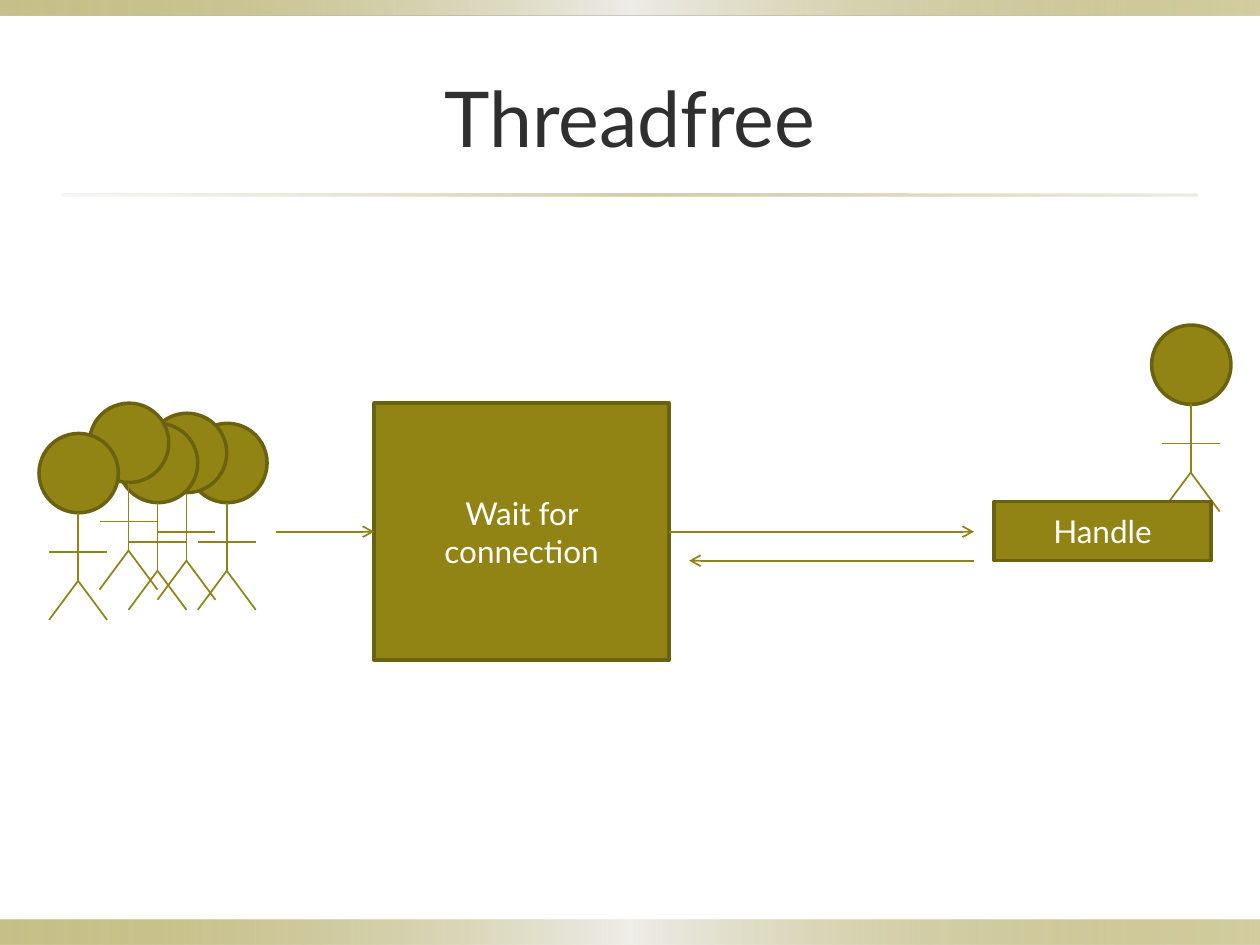
from dataclasses import dataclass

from lxml import etree
from pptx import Presentation
from pptx.dml.color import RGBColor
from pptx.enum.shapes import MSO_CONNECTOR, MSO_SHAPE
from pptx.enum.text import MSO_ANCHOR, PP_ALIGN
from pptx.oxml.ns import qn
from pptx.util import Inches, Pt

RECTANGLE, OVAL = MSO_SHAPE.RECTANGLE, MSO_SHAPE.OVAL
STRAIGHT = MSO_CONNECTOR.STRAIGHT
MIDDLE, CENTER = MSO_ANCHOR.MIDDLE, PP_ALIGN.CENTER
LEFT_SIDE, RIGHT_SIDE = 1, 3


@dataclass(frozen=True)
class Theme:
    font: str = "Lato"
    title_size: int = 44
    body_size: int = 18
    olive: str = "918415"
    outline: str = "6B6210"
    pale: str = "EEEDE8"
    sand: str = "DCD9CC"
    title: str = "2F2F2F"
    white: str = "FFFFFF"


theme = Theme()

presentation = Presentation()
presentation.slide_width = Inches(10)
presentation.slide_height = Inches(7.5)
slide = presentation.slides.add_slide(presentation.slide_layouts[6])


def add_block(shapes, kind, left, top, width, height):
    shape = shapes.add_shape(kind, Inches(left), Inches(top), Inches(width), Inches(height))
    shape.shadow.inherit = False
    shape.fill.solid()
    shape.fill.fore_color.rgb = RGBColor.from_string(theme.olive)
    shape.line.color.rgb = RGBColor.from_string(theme.outline)
    shape.line.width = Pt(2)
    return shape


def add_line(shapes, start, end, arrow=False):
    points = [Inches(value) for value in (*start, *end)]
    connector = shapes.add_connector(STRAIGHT, *points)
    connector.line.color.rgb = RGBColor.from_string(theme.olive)
    connector.line.width = Pt(1)
    if arrow:
        etree.SubElement(connector.line._get_or_add_ln(), qn("a:tailEnd"), type="arrow")
    etree.SubElement(connector._element.spPr, qn("a:effectLst"))
    return connector


# Gradient bars and title rule: each stop is position, colour, opacity (percent)
bar_stops = [(0, theme.olive, 50), (50, theme.pale, 100), (100, theme.olive, 40)]
rule_stops = [(0, theme.sand, 20), (50, theme.olive, 40), (100, theme.sand, 50)]
for left, top, width, height, stops in [
    (0, 7.3, 10, 0.2, bar_stops),
    (0, 0, 10, 0.12, bar_stops),
    (0.5, 1.54, 9, 0.02, rule_stops),
]:
    bar = add_block(slide.shapes, RECTANGLE, left, top, width, height)
    bar.line.fill.background()
    bar.fill.gradient()
    bar.fill.gradient_angle = 0
    stop_list = bar._element.spPr.find(".//" + qn("a:gsLst"))
    for stop in list(stop_list):
        stop_list.remove(stop)
    for position, color, opacity in stops:
        stop = etree.SubElement(stop_list, qn("a:gs"), pos=str(position * 1000))
        stop_color = etree.SubElement(stop, qn("a:srgbClr"), val=color)
        etree.SubElement(stop_color, qn("a:alpha"), val=str(opacity * 1000))

title = slide.shapes.add_textbox(Inches(0.5), Inches(0.3), Inches(9), Inches(1.25))
wait_box = add_block(slide.shapes, RECTANGLE, 2.97, 3.2, 2.34, 2.04)

# Stick figures, given by head centre and head top; the first is behind the Handle box
for center, top in [
    (9.45, 2.58), (1.8, 3.36), (1.48, 3.28), (1.25, 3.36), (1.02, 3.2), (0.62, 3.44),
]:
    figure = slide.shapes.add_group_shape().shapes
    add_block(figure, OVAL, center - 0.31, top, 0.63, 0.63)
    neck, arms, hip, feet = (top + drop for drop in (0.63, 0.94, 1.17, 1.48))
    left, right = center - 0.23, center + 0.23
    add_line(figure, (center, neck), (center, hip))
    add_line(figure, (right, arms), (left, arms))
    for foot in (left, right):
        add_line(figure, (center, hip), (foot, feet))

handle_box = add_block(slide.shapes, RECTANGLE, 7.89, 3.98, 1.72, 0.47)

for shape, text, size, color in [
    (title, "Threadfree", theme.title_size, theme.title),
    (wait_box, "Wait for connection", theme.body_size, theme.white),
    (handle_box, "Handle", theme.body_size, theme.white),
]:
    frame = shape.text_frame
    frame.word_wrap = True
    frame.vertical_anchor = MIDDLE
    paragraph = frame.paragraphs[0]
    paragraph.text = text
    paragraph.alignment = CENTER
    paragraph.font.name = theme.font
    paragraph.font.size = Pt(size)
    paragraph.font.color.rgb = RGBColor.from_string(color)

incoming = add_line(slide.shapes, (2.19, 4.22), (2.97, 4.22), arrow=True)
incoming.end_connect(wait_box, LEFT_SIDE)
request = add_line(slide.shapes, (5.31, 4.22), (7.73, 4.22), arrow=True)
request.begin_connect(wait_box, RIGHT_SIDE)
add_line(slide.shapes, (7.73, 4.45), (5.47, 4.45), arrow=True)

presentation.save("out.pptx")
